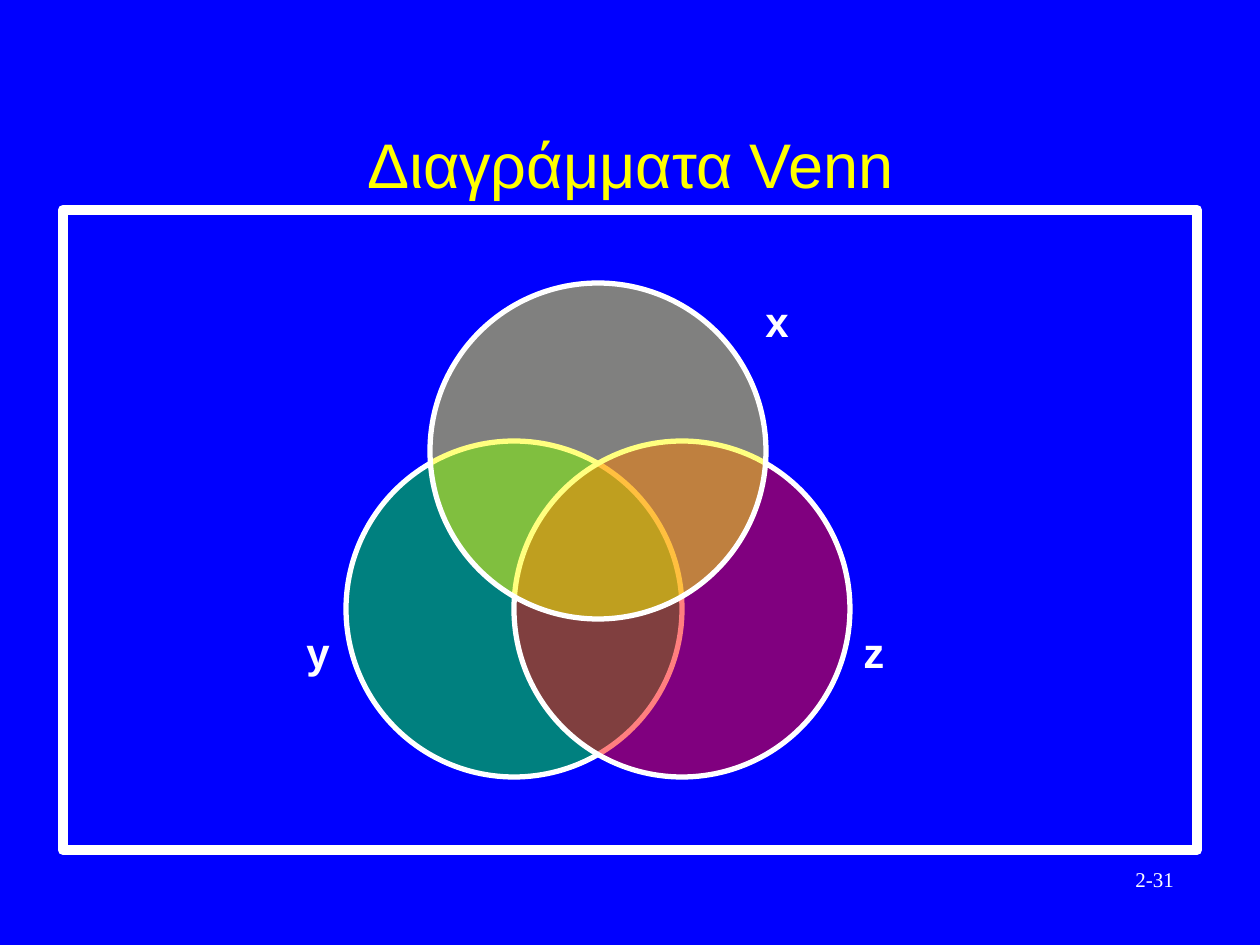
from lxml.etree import SubElement
from pptx import Presentation
from pptx.dml.color import RGBColor
from pptx.enum.shapes import MSO_SHAPE as Shape
from pptx.enum.text import MSO_ANCHOR as Anchor, MSO_AUTO_SIZE as AutoSize, PP_ALIGN as Align
from pptx.oxml.ns import qn
from pptx.util import Emu, Pt

PX = 914400 // 126
DIAMETER = 336
WHITE, YELLOW, BLUE = "FFFFFF", "FFFF00", "0000FF"
LABEL = {"size": Pt(24), "bold": True, "name": "Arial"}
NUMBER = {"size": Pt(12), "name": "Times New Roman"}
TITLE = {"size": Pt(36), "name": "Arial"}


def px(*lengths):
    return [Emu(length * PX) for length in lengths]


def paint(color_format, color):
    color_format.rgb = RGBColor.from_string(color)


def format_font(font, values, color):
    for name, value in values.items():
        setattr(font, name, value)
    paint(font.color, color)


def set_title(slide, text, box):
    title = slide.shapes.title
    for name, value in zip(("left", "top", "width", "height"), px(*box)):
        setattr(title, name, value)
    frame = title.text_frame
    frame.text = text
    frame.vertical_anchor = Anchor.MIDDLE
    frame.auto_size = AutoSize.NONE
    paragraph = frame.paragraphs[0]
    paragraph.alignment = Align.CENTER
    format_font(paragraph.runs[0].font, TITLE, YELLOW)


def add_label(slide, text, box, values):
    frame = slide.shapes.add_textbox(*px(*box)).text_frame
    frame.word_wrap = False
    frame.auto_size = AutoSize.SHAPE_TO_FIT_TEXT
    frame.text = text
    format_font(frame.paragraphs[0].runs[0].font, values, WHITE)


def add_outline(slide, kind, box, line_width):
    """Add an unfilled shape with a white line."""
    shape = slide.shapes.add_shape(kind, *px(*box))
    shape.shadow.inherit = False
    shape.fill.background()
    paint(shape.line.color, WHITE)
    shape.line.width = Pt(line_width)
    return shape


def add_set(slide, left, top, color):
    """Add one circle of the diagram with a half-transparent fill."""
    circle = add_outline(slide, Shape.OVAL, (left, top, DIAMETER, DIAMETER), 3)
    circle.fill.solid()
    paint(circle.fill.fore_color, color)
    color_element = circle.fill._xPr.find(qn("a:solidFill"))[0]
    SubElement(color_element, qn("a:alpha"), val="50000")


def main():
    presentation = Presentation()
    presentation.slide_width, presentation.slide_height = px(1260, 945)
    slide = presentation.slides.add_slide(presentation.slide_layouts[5])
    background = slide.background.fill
    background.solid()
    paint(background.fore_color, BLUE)

    add_label(slide, "2-31", (1123, 860, 67, 38), NUMBER)
    set_title(slide, "Διαγράμματα Venn", (95, 84, 1071, 158))

    left, top = 346, 441
    add_set(slide, left, top, "00FF00")
    add_outline(slide, Shape.RECTANGLE, (63, 210, 1134, 640), 6)
    add_set(slide, left + DIAMETER // 2, top, "FF0000")
    add_set(slide, left + DIAMETER // 4, 283, YELLOW)

    for name, label_left, label_top in (("x", 753, 289), ("y", 294, 620), ("z", 851, 620)):
        add_label(slide, name, (label_left, label_top, 49, 63), LABEL)

    presentation.save("out.pptx")


if __name__ == "__main__":
    main()
